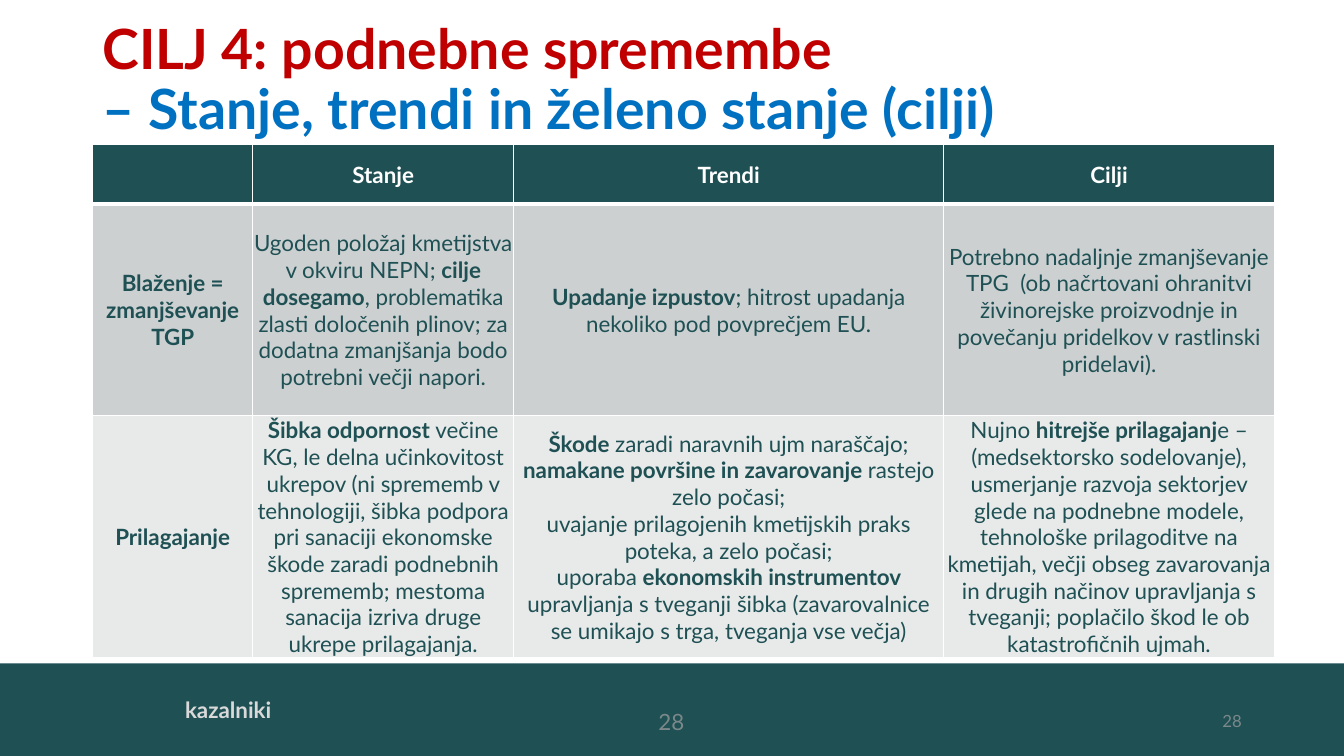
import itertools
from dataclasses import dataclass

import pptx
import pptx.dml.color
import pptx.enum.shapes
import pptx.enum.text
import pptx.oxml
import pptx.util
from pptx.util import Pt

ALIGN = pptx.enum.text.PP_ALIGN
ANCHOR = pptx.enum.text.MSO_ANCHOR


@dataclass(frozen=True)
class Theme:
    font: str = "Lato"
    teal: str = "1E5054"
    red: str = "C00000"
    blue: str = "0070C0"
    white: str = "FFFFFF"
    footer_gray: str = "D9D9D9"
    number_gray: str = "7B888A"
    bands: tuple = ("CDD0D1", "E8E9E9")
    title_size: float = 39.6
    text_size: float = 16
    small_size: float = 12


THEME = Theme()

# Asterisks switch bold on and off; a cell is a tuple of paragraphs.
TITLE = "CILJ 4: podnebne spremembe\n–\u00a0Stanje, trendi in želeno stanje (cilji)"
FOOTER = "kazalniki"
PAGE = "28"
HEADER = ["", "Stanje", "Trendi", "Cilji"]
GOALS = [
    [
        ("*Blaženje = zmanjševanje TGP*",),
        ("Ugoden položaj kmetijstva v okviru NEPN; *cilje dosegamo*, problematika zlasti "
         "določenih plinov; za dodatna zmanjšanja bodo potrebni večji napori.",),
        ("*Upadanje izpustov*; hitrost upadanja nekoliko pod povprečjem EU.",),
        ("Potrebno nadaljnje zmanjševanje TPG  (ob načrtovani ohranitvi živinorejske "
         "proizvodnje in povečanju pridelkov v rastlinski pridelavi).",),
    ],
    [
        ("*Prilagajanje*",),
        ("*Šibka odpornost* večine KG, le delna učinkovitost ukrepov (ni sprememb v "
         "tehnologiji, šibka podpora pri sanaciji ekonomske škode zaradi podnebnih "
         "sprememb; mestoma sanacija izriva druge ukrepe prilagajanja.",),
        ("*Škode* zaradi naravnih ujm naraščajo;",
         "*namakane površine in zavarovanje *rastejo zelo počasi;",
         "uvajanje prilagojenih kmetijskih praks poteka, a zelo počasi;",
         "uporaba *ekonomskih instrumentov *upravljanja s tveganji šibka "
         "(zavarovalnice se umikajo s trga, tveganja vse večja)"),
        ("Nujno *hitrejše prilagajanj*e – (medsektorsko sodelovanje), usmerjanje razvoja "
         "sektorjev glede na podnebne modele, tehnološke prilagoditve na kmetijah, večji "
         "obseg zavarovanja in drugih načinov upravljanja s tveganji; poplačilo škod le ob "
         "katastrofičnih ujmah.",),
    ],
]

# Lengths in points
SLIDE_WIDTH, SLIDE_HEIGHT = 960, 540
BAND_TOP = 473.8
TABLE_LEFT, TABLE_TOP = 66.2, 103.2
COLUMN_WIDTHS = [114.4, 186.4, 307.2, 236.2]
ROW_HEIGHTS = [42.4, 151, 168]


def rgb(color):
    return pptx.dml.color.RGBColor.from_string(color)


def write(frame, *paragraphs, colors, size=THEME.text_size, align=ALIGN.CENTER, spacing=None):
    """Fill a text frame; each line within a paragraph takes the next of the colors."""
    line_colors = itertools.cycle(colors)
    for index, text in enumerate(paragraphs):
        paragraph = frame.add_paragraph() if index else frame.paragraphs[0]
        paragraph.alignment = align
        if spacing:
            paragraph.line_spacing = spacing
        for line_index, line in enumerate(text.split("\n")):
            if line_index:
                paragraph.add_line_break()
            color = next(line_colors)
            for part_index, part in enumerate(line.split("*")):
                if not part:
                    continue
                run = paragraph.add_run()
                run.text = part
                run.font.name = THEME.font
                run.font.size = Pt(size)
                run.font.bold = part_index % 2 == 1
                run.font.color.rgb = rgb(color)


def add_label(slide, text, left, top, width, height, anchor, inset=7.2, **text_format):
    frame = slide.shapes.add_textbox(Pt(left), Pt(top), Pt(width), Pt(height)).text_frame
    frame.word_wrap = True
    frame.vertical_anchor = anchor
    frame.margin_left = Pt(inset)
    write(frame, text, **text_format)


def add_borders(cell, bottom):
    properties = cell._tc.get_or_add_tcPr()
    for side, width in {"L": 1, "R": 1, "T": 1, "B": bottom}.items():
        properties.append(pptx.oxml.parse_xml(
            f'<a:ln{side} xmlns:a="http://schemas.openxmlformats.org/drawingml/2006/main" '
            f'w="{Pt(width)}"><a:solidFill><a:srgbClr val="{THEME.white}"/></a:solidFill>'
            f'</a:ln{side}>'))


def fill_cell(cell, paragraphs, fill, color, bottom):
    cell.vertical_anchor = ANCHOR.MIDDLE
    cell.margin_left = cell.margin_right = cell.margin_top = Pt(0.72)
    cell.margin_bottom = Pt(0)
    add_borders(cell, bottom)
    cell.fill.solid()
    cell.fill.fore_color.rgb = rgb(fill)
    write(cell.text_frame, *paragraphs, colors=[color])


def add_goals_table(slide):
    table = slide.shapes.add_table(
        len(ROW_HEIGHTS), len(COLUMN_WIDTHS), Pt(TABLE_LEFT), Pt(TABLE_TOP),
        Pt(sum(COLUMN_WIDTHS)), Pt(sum(ROW_HEIGHTS))).table
    for column, width in zip(table.columns, COLUMN_WIDTHS):
        column.width = Pt(width)
    for row, height in zip(table.rows, ROW_HEIGHTS):
        row.height = Pt(height)
    for cell, heading in zip(table.rows[0].cells, HEADER):
        fill_cell(cell, [f"*{heading}*"], THEME.teal, THEME.white, bottom=3)
    for index, (goal, band) in enumerate(zip(GOALS, THEME.bands), start=1):
        for cell, paragraphs in zip(table.rows[index].cells, goal):
            fill_cell(cell, paragraphs, band, THEME.teal, bottom=1)


def add_footer(slide):
    band = slide.shapes.add_shape(
        pptx.enum.shapes.MSO_SHAPE.RECTANGLE, Pt(0), Pt(BAND_TOP),
        Pt(SLIDE_WIDTH), Pt(SLIDE_HEIGHT - BAND_TOP))
    band.shadow.inherit = False
    band.fill.solid()
    band.fill.fore_color.rgb = rgb(THEME.teal)
    band.line.fill.background()
    add_label(slide, f"*{FOOTER}*", 115.2, 494, 725, 26.6, ANCHOR.TOP, inset=17,
              colors=[THEME.footer_gray], align=ALIGN.LEFT)
    add_label(slide, PAGE, 371.5, 501.1, 216, 28.8, ANCHOR.MIDDLE,
              colors=[THEME.number_gray])
    add_label(slide, PAGE, 678.2, 500.4, 216, 28.8, ANCHOR.MIDDLE,
              colors=[THEME.number_gray], size=THEME.small_size, align=ALIGN.RIGHT)


def add_title(slide):
    title = slide.shapes.title
    title.left, title.top, title.width, title.height = Pt(66.2), Pt(28.8), Pt(700), Pt(58.3)
    frame = title.text_frame
    frame.auto_size = pptx.enum.text.MSO_AUTO_SIZE.NONE
    frame.word_wrap = True
    frame.vertical_anchor = ANCHOR.MIDDLE
    bold_title = "\n".join(f"*{line}*" for line in TITLE.split("\n"))
    write(frame, bold_title, colors=[THEME.red, THEME.blue], size=THEME.title_size,
          align=ALIGN.LEFT, spacing=0.9)


def main():
    deck = pptx.Presentation()
    deck.slide_width, deck.slide_height = Pt(SLIDE_WIDTH), Pt(SLIDE_HEIGHT)
    slide = deck.slides.add_slide(deck.slide_layouts.get_by_name("Title Only"))
    add_footer(slide)
    add_title(slide)
    add_goals_table(slide)
    deck.save("out.pptx")


if __name__ == "__main__":
    main()
